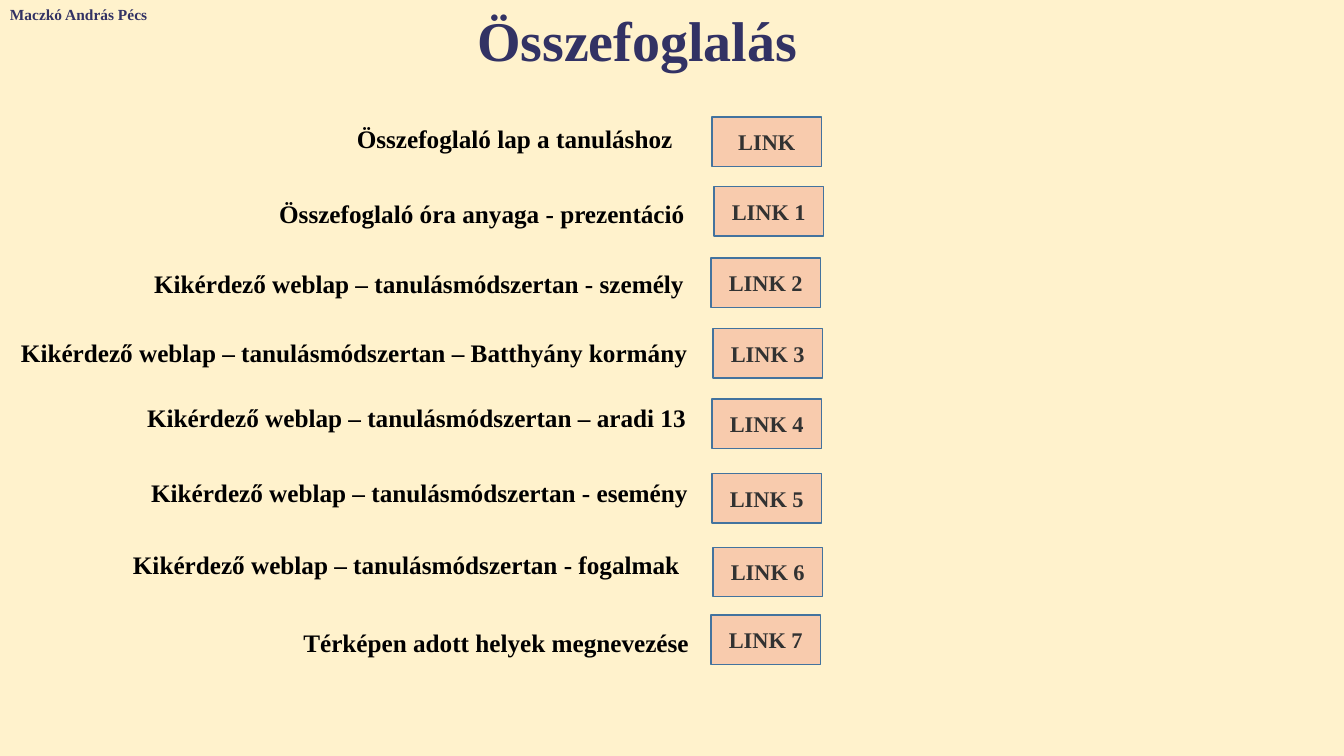
from pptx import Presentation
from pptx.dml.color import RGBColor
from pptx.enum.shapes import MSO_SHAPE
from pptx.enum.text import MSO_ANCHOR, PP_ALIGN
from pptx.util import Inches, Pt

RECTANGLE = MSO_SHAPE.RECTANGLE
TOP, MIDDLE = MSO_ANCHOR.TOP, MSO_ANCHOR.MIDDLE
LEFT, CENTER = PP_ALIGN.LEFT, PP_ALIGN.CENTER

CREAM = RGBColor(0xFF, 0xF2, 0xCC)
NAVY = RGBColor(0x32, 0x32, 0x64)
PEACH = RGBColor(0xF8, 0xCB, 0xAD)
STEEL = RGBColor(0x43, 0x73, 0x9E)
CHARCOAL = RGBColor(0x32, 0x32, 0x32)
BLACK = RGBColor(0, 0, 0)

FONT = "Times New Roman"
SLIDE_W, SLIDE_H = 13.33, 7.5
LABEL_H = 0.4
BUTTON_W, BUTTON_H = 1.09, 0.49

# Each row: label, (label left, top, width), button text, (button left, top)
ROWS = [
    ("Összefoglaló lap a tanuláshoz", (3.44, 1.17, 3.41), "LINK", (7.06, 1.16)),
    ("Összefoglaló óra anyaga - prezentáció", (2.67, 1.92, 4.41), "LINK 1", (7.08, 1.85)),
    ("Kikérdező weblap – tanulásmódszertan - személy", (1.43, 2.61, 5.61), "LINK 2", (7.05, 2.56)),
    ("Kikérdező weblap – tanulásmódszertan – Batthyány kormány", (0.11, 3.3, 6.97), "LINK 3", (7.07, 3.26)),
    ("Kikérdező weblap – tanulásmódszertan – aradi 13", (1.36, 3.94, 5.68), "LINK 4", (7.06, 3.96)),
    ("Kikérdező weblap – tanulásmódszertan - esemény", (1.4, 4.69, 5.61), "LINK 5", (7.06, 4.7)),
    ("Kikérdező weblap – tanulásmódszertan - fogalmak", (1.22, 5.4, 5.78), "LINK 6", (7.07, 5.43)),
    ("Térképen adott helyek megnevezése", (2.91, 6.17, 4.11), "LINK 7", (7.05, 6.1)),
]


def write(holder, text, size, color, align=LEFT, anchor=TOP):
    """Put one bold line of text into a shape."""
    frame = holder.text_frame
    frame.word_wrap = True
    frame.vertical_anchor = anchor
    line = frame.paragraphs[0]
    line.alignment = align
    run = line.add_run()
    run.text = text
    run.font.name = FONT
    run.font.size = Pt(size)
    run.font.bold = True
    run.font.color.rgb = color


def add_label(slide, box, text, size=18, color=BLACK):
    """Add a left-aligned text box."""
    label = slide.shapes.add_textbox(*map(Inches, box))
    write(label, text, size, color)


def add_button(slide, box, text):
    """Add a peach rectangle with a centred caption."""
    button = slide.shapes.add_shape(RECTANGLE, *map(Inches, box))
    button.shadow.inherit = False
    button.fill.solid()
    button.fill.fore_color.rgb = PEACH
    button.line.color.rgb = STEEL
    button.line.width = Pt(1)
    write(button, text, 16, CHARCOAL, align=CENTER, anchor=MIDDLE)


def add_heading(slide, box, text):
    """Place and fill the title."""
    title = slide.shapes.title
    title.left, title.top, title.width, title.height = map(Inches, box)
    write(title, text, 40, NAVY, align=CENTER)


def add_link_rows(slide, rows):
    """Add a label and its button for every row."""
    for topic, label_box, caption, button_corner in rows:
        add_label(slide, (*label_box, LABEL_H), topic)
        add_button(slide, (*button_corner, BUTTON_W, BUTTON_H), caption)


def main():
    """Build and save the summary slide."""
    deck = Presentation()
    deck.slide_width, deck.slide_height = Inches(SLIDE_W), Inches(SLIDE_H)
    slide = deck.slides.add_slide(deck.slide_layouts[5])
    slide.background.fill.solid()
    slide.background.fill.fore_color.rgb = CREAM
    add_heading(slide, (1.84, 0, 8.96, 0.77), "Összefoglalás")
    add_label(slide, (0, 0, 1.59, 0.29), "Maczkó András Pécs", size=11, color=NAVY)
    add_link_rows(slide, ROWS)
    deck.save("out.pptx")


if __name__ == "__main__":
    main()
